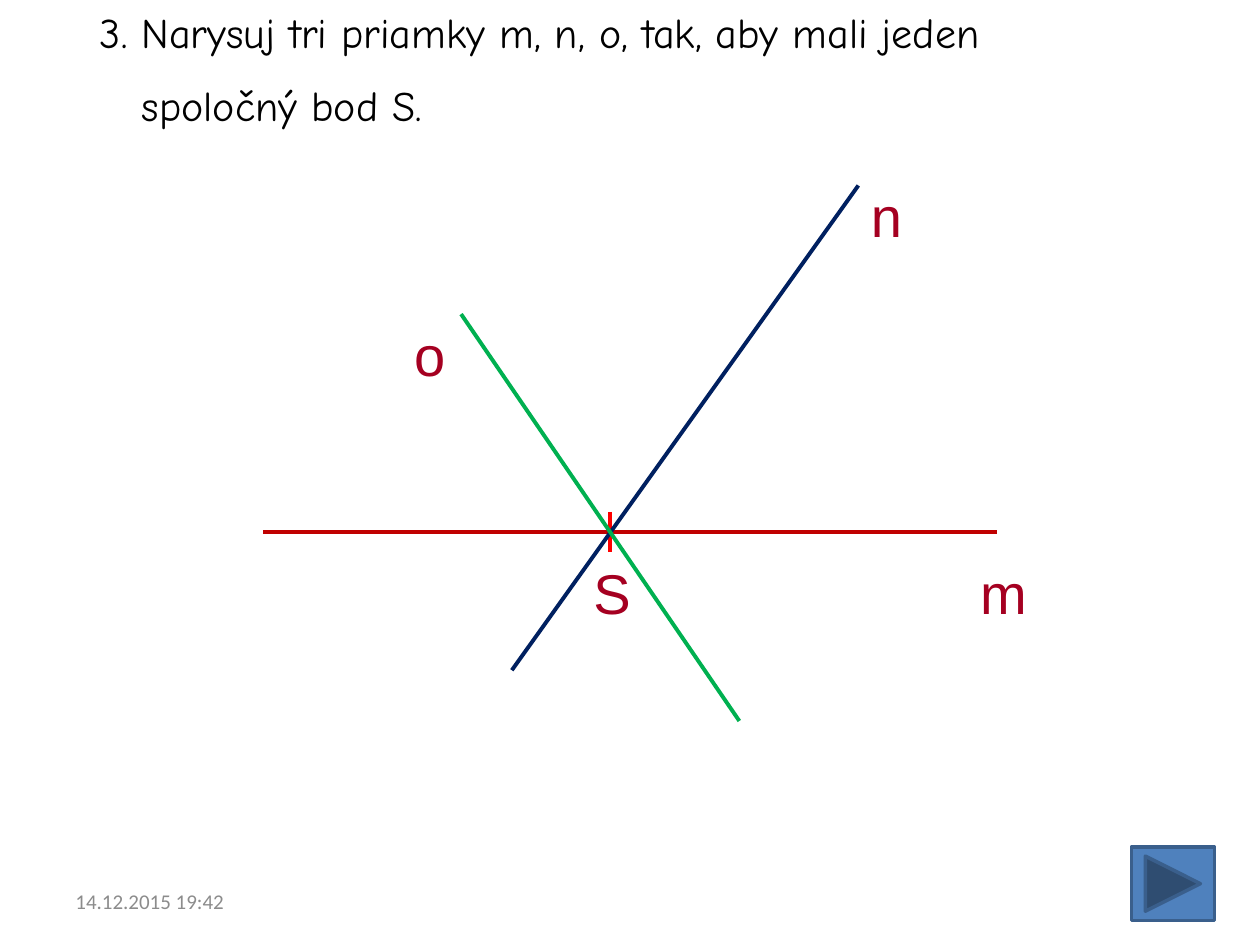
import pptx
import pptx.util
import pptx.dml.color
import pptx.enum.shapes
import pptx.enum.text
import pptx.oxml.ns
import lxml.etree

Pt = pptx.util.Pt
RGBColor = pptx.dml.color.RGBColor
MSO_ANCHOR = pptx.enum.text.MSO_ANCHOR
MSO_AUTO_SIZE = pptx.enum.text.MSO_AUTO_SIZE
PP_ALIGN = pptx.enum.text.PP_ALIGN

BLACK = RGBColor(0x00, 0x00, 0x00)
RED = RGBColor(0xC0, 0x00, 0x00)
BRIGHT_RED = RGBColor(0xFF, 0x00, 0x00)
NAVY = RGBColor(0x00, 0x20, 0x60)
GREEN = RGBColor(0x00, 0xB0, 0x50)
CRIMSON = RGBColor(0xA5, 0x00, 0x21)
GRAY = RGBColor(0x8C, 0x8C, 0x8C)
BUTTON_FILL = RGBColor(0x4F, 0x81, 0xBD)
BUTTON_LINE = RGBColor(0x3A, 0x5F, 0x8C)


def add_run(p, text, font, size, color):
    r = p.add_run()
    r.text = text
    r.font.name = font
    r.font.size = Pt(size)
    r.font.color.rgb = color


prs = pptx.Presentation()
prs.slide_width = Pt(720)
prs.slide_height = Pt(540)
s = prs.slides.add_slide(prs.slide_layouts[5])

title = s.shapes.title
title.left, title.top, title.width, title.height = Pt(42.5), Pt(0), Pt(584), Pt(211)
tf = title.text_frame
tf.word_wrap = True
tf.auto_size = MSO_AUTO_SIZE.NONE
tf.vertical_anchor = MSO_ANCHOR.TOP
tf.margin_left = Pt(14.5)
task = [
    ("3. Narysuj tri priamky m, n, o, tak, aby mali jeden", 0),
    ("spoločný bod S.", 24),
]
for i, (text, indent) in enumerate(task):
    p = tf.paragraphs[0] if i == 0 else tf.add_paragraph()
    p.alignment = PP_ALIGN.LEFT
    p.space_before = Pt(13)
    p._p.get_or_add_pPr().set("marL", str(Pt(indent)))
    add_run(p, text, "Comic Neue", 24, BLACK)

lines = [
    (150.5, 304, 569.5, 304, RED),
    (348.5, 292.5, 348.5, 315.5, BRIGHT_RED),
    (292.5, 383, 490.5, 106, NAVY),
    (422.5, 412, 263.5, 179.5, GREEN),
]
for x1, y1, x2, y2, color in lines:
    line = s.shapes.add_connector(
        pptx.enum.shapes.MSO_CONNECTOR.STRAIGHT, Pt(x1), Pt(y1), Pt(x2), Pt(y2))
    line.line.color.rgb = color
    line.line.width = Pt(2.25)
    lxml.etree.SubElement(line._element.spPr, pptx.oxml.ns.qn("a:effectLst"))

labels = [
    ("m", 553, 315.5, 42),
    ("S", 332, 315.5, 36),
    ("n", 490.5, 100, 32.5),
    ("o", 229.5, 179.5, 32.5),
]
for text, x, y, w in labels:
    tf = s.shapes.add_textbox(Pt(x), Pt(y), Pt(w), Pt(46)).text_frame
    tf.word_wrap = False
    tf.auto_size = MSO_AUTO_SIZE.SHAPE_TO_FIT_TEXT
    add_run(tf.paragraphs[0], text, "Arial", 32, CRIMSON)

sp = s.shapes.add_shape(
    pptx.enum.shapes.MSO_SHAPE.ACTION_BUTTON_FORWARD_OR_NEXT,
    Pt(646.5), Pt(484), Pt(47.5), Pt(42))
sp.shadow.inherit = False
sp.fill.solid()
sp.fill.fore_color.rgb = BUTTON_FILL
sp.line.color.rgb = BUTTON_LINE
sp.line.width = Pt(2)

tf = s.shapes.add_textbox(Pt(36), Pt(500.5), Pt(168), Pt(28.5)).text_frame
tf.word_wrap = True
tf.vertical_anchor = MSO_ANCHOR.MIDDLE
add_run(tf.paragraphs[0], "14.12.2015 19:42", "Calibri", 12, GRAY)

prs.save("out.pptx")
